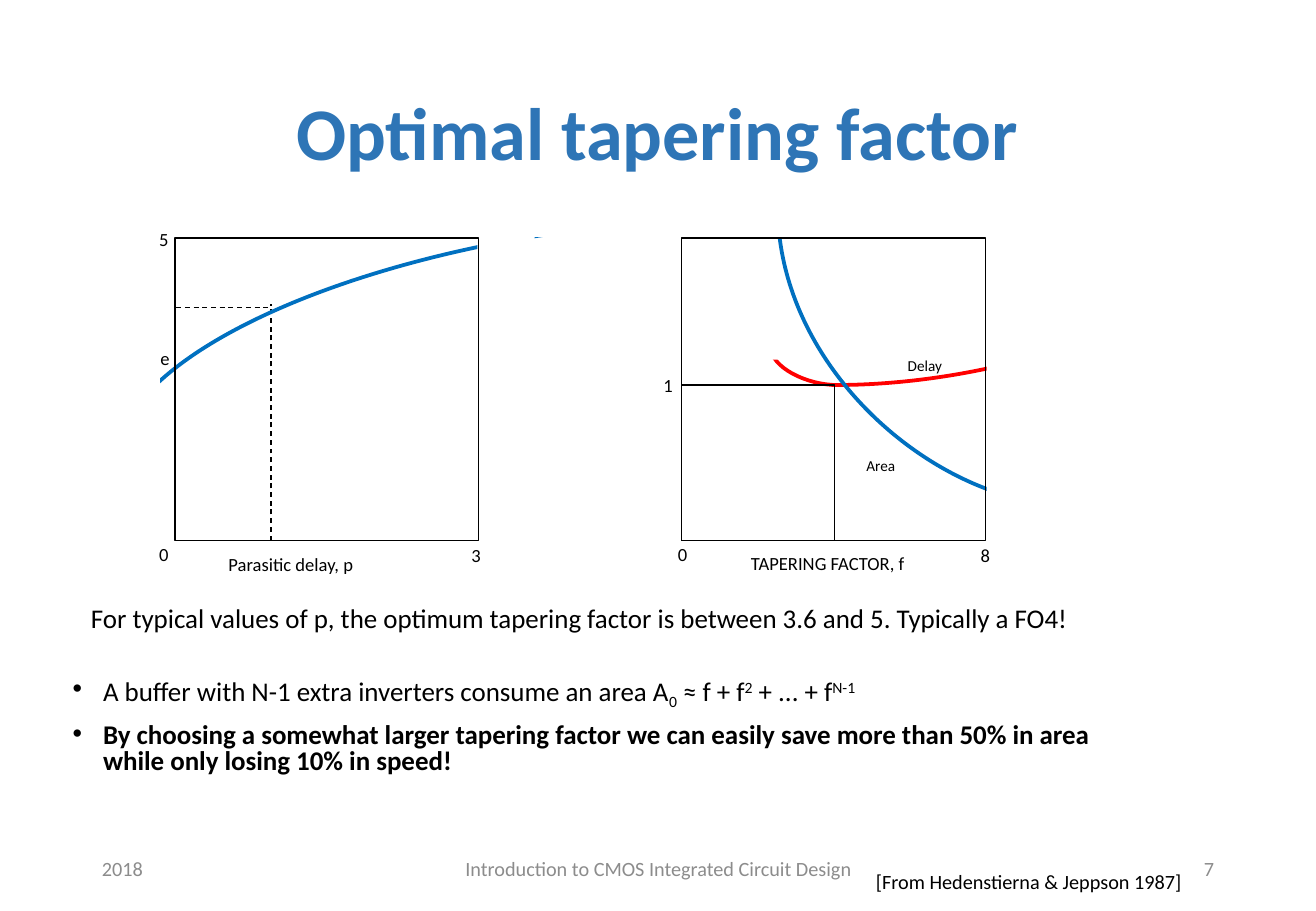
from lxml.etree import SubElement
from pptx import Presentation
from pptx.dml.color import RGBColor
from pptx.enum.dml import MSO_LINE
from pptx.enum.shapes import MSO_CONNECTOR, MSO_SHAPE
from pptx.enum.text import MSO_ANCHOR, MSO_AUTO_SIZE, PP_ALIGN
from pptx.oxml.ns import qn
from pptx.util import Pt

PX = 9144
KAPPA = 0.55
BLACK = RGBColor(0x00, 0x00, 0x00)
WHITE = RGBColor(0xFF, 0xFF, 0xFF)
GREY = RGBColor(0x8C, 0x8C, 0x8C)
TITLE_BLUE = RGBColor(0x2E, 0x75, 0xB6)
CURVE_BLUE = RGBColor(0x00, 0x70, 0xC0)
RED = RGBColor(0xFF, 0x00, 0x00)


def add_run(paragraph, text, size, color=BLACK, bold=False, baseline=0):
    run = paragraph.add_run()
    run.text = text
    run.font.name = "Calibri"
    run.font.size = Pt(size)
    run.font.bold = bold
    run.font.color.rgb = color
    if baseline:
        run.font._element.set("baseline", str(baseline))


def add_box(left, top, width, height, wrap=True, inset=True):
    frame = slide.shapes.add_textbox(left * PX, top * PX, width * PX, height * PX).text_frame
    frame.word_wrap = wrap
    if not wrap:
        frame.auto_size = MSO_AUTO_SIZE.SHAPE_TO_FIT_TEXT
    if not inset:
        frame.margin_left = frame.margin_right = 0
        frame.margin_top = frame.margin_bottom = 0
    return frame


prs = Presentation()
prs.slide_width = 1083 * PX
prs.slide_height = 750 * PX
slide = prs.slides.add_slide(prs.slide_layouts[5])

title = slide.shapes.title
title.left, title.top, title.width, title.height = 74 * PX, 40 * PX, 934 * PX, 145 * PX
title.text_frame.auto_size = MSO_AUTO_SIZE.NONE
title.text_frame.vertical_anchor = MSO_ANCHOR.MIDDLE
heading = title.text_frame.paragraphs[0]
heading.alignment = PP_ALIGN.CENTER
heading.line_spacing = 0.9
add_run(heading, "Optimal tapering factor", 44, TITLE_BLUE, bold=True)

footers = [
    (74, 244, PP_ALIGN.LEFT, "2018"),
    (359, 366, PP_ALIGN.CENTER, "Introduction to CMOS Integrated Circuit Design"),
    (765, 244, PP_ALIGN.RIGHT, "7"),
]
for left, width, alignment, text in footers:
    footer = add_box(left, 695, width, 40)
    footer.vertical_anchor = MSO_ANCHOR.MIDDLE
    footer.paragraphs[0].alignment = alignment
    add_run(footer.paragraphs[0], text, 12, GREY)

for x1, y1, x2, y2 in [(223, 445, 223, 250), (145, 253, 222, 253)]:
    guide = slide.shapes.add_connector(MSO_CONNECTOR.STRAIGHT, x1 * PX, y1 * PX, x2 * PX, y2 * PX)
    guide.line.color.rgb = BLACK
    guide.line.width = Pt(0.75)
    guide.line.dash_style = MSO_LINE.DASH
    SubElement(guide._element.spPr, qn("a:effectLst"))

quarter_ellipses = [
    (92, 387, 601, 181, CURVE_BLUE),
    (988, 196, 688, 317, RED),
    (634, 285, 689, 317, RED),
    (640, 170, 881, 416, CURVE_BLUE),
]
for x1, y1, x2, y2, color in quarter_ellipses:
    builder = slide.shapes.build_freeform(x1 * PX, y1 * PX)
    bezier = [(x1, y1 + (y2 - y1) * KAPPA), (x2 + (x1 - x2) * (1 - KAPPA), y2), (x2, y2)]
    builder.add_line_segments([(x * PX, y * PX) for x, y in bezier], close=False)
    curve = builder.convert_to_shape()
    outline = next(curve._element.iter(qn("a:path")))
    segments = outline.findall(qn("a:lnTo"))
    cubic = SubElement(outline, qn("a:cubicBezTo"))
    for segment in segments:
        cubic.append(segment[0])
        outline.remove(segment)
    curve.shadow.inherit = False
    curve.fill.background()
    curve.line.color.rgb = color
    curve.line.width = Pt(2.25)

panels = [
    (616, 267, 31, 29, WHITE, None),
    (393, 190, 47, 28, WHITE, None),
    (88, 288, 43, 128, WHITE, WHITE),
    (383, 169, 283, 26, WHITE, None),
    (812, 187, 182, 238, WHITE, None),
    (561, 317, 126, 128, None, BLACK),
    (561, 196, 250, 249, None, BLACK),
    (144, 196, 250, 249, None, BLACK),
]
for left, top, width, height, fill, line in panels:
    panel = slide.shapes.add_shape(MSO_SHAPE.RECTANGLE, left * PX, top * PX, width * PX, height * PX)
    panel.shadow.inherit = False
    if fill is None:
        panel.fill.background()
    else:
        panel.fill.solid()
        panel.fill.fore_color.rgb = fill
    if line is None:
        panel.line.fill.background()
    else:
        panel.line.color.rgb = line
        panel.line.width = Pt(0.75)

plot_labels = [
    (188, 455, 126, 19, 11, "Parasitic delay, p"),
    (618, 454, 160, 19, 11, "TAPERING FACTOR, f"),
    (747, 293, 38, 19, 9, "Delay"),
    (713, 376, 31, 19, 9, "Area"),
    (132, 286, 16, 21, 11, "e"),
    (131, 447, 16, 21, 11, "0"),
    (131, 188, 16, 21, 11, "5"),
    (388, 448, 16, 21, 11, "3"),
    (807, 448, 16, 21, 11, "8"),
    (546, 308, 16, 21, 11, "1"),
    (558, 447, 16, 21, 11, "0"),
]
for left, top, width, height, size, text in plot_labels:
    label = add_box(left, top, width, height, wrap=False, inset=False)
    add_run(label.paragraphs[0], text, size)

bullets = [
    [
        ("A buffer with N-1 extra inverters consume an area A", False, 0),
        ("0", False, -25000),
        (" ≈ f + f", False, 0),
        ("2", False, 30000),
        (" + ... + f", False, 0),
        ("N-1", False, 30000),
    ],
    [
        (
            "By choosing a somewhat larger tapering factor we can easily save more than 50% in area "
            "while only losing 10% in speed!",
            True,
            0,
        ),
    ],
]
conclusions = add_box(50, 553, 900, 114)
conclusions.add_paragraph()
for paragraph, runs in zip(conclusions.paragraphs, bullets):
    paragraph.line_spacing = 0.8
    paragraph.space_before = Pt(10)
    properties = paragraph._p.get_or_add_pPr()
    properties.set("marL", str(25 * PX))
    properties.set("indent", str(-25 * PX))
    SubElement(properties, qn("a:buFont")).set("typeface", "Arial")
    SubElement(properties, qn("a:buChar")).set("char", "•")
    for text, bold, baseline in runs:
        add_run(paragraph, text, 16, bold=bold, baseline=baseline)

summary = add_box(65, 490, 935, 37)
add_run(
    summary.paragraphs[0],
    "For typical values of p, the optimum tapering factor is between 3.6 and 5. Typically a FO4!",
    16,
)

citation = add_box(711, 711, 275, 30, wrap=False)
add_run(citation.paragraphs[0], "[From Hedenstierna & Jeppson 1987]", 12)

prs.save("out.pptx")
